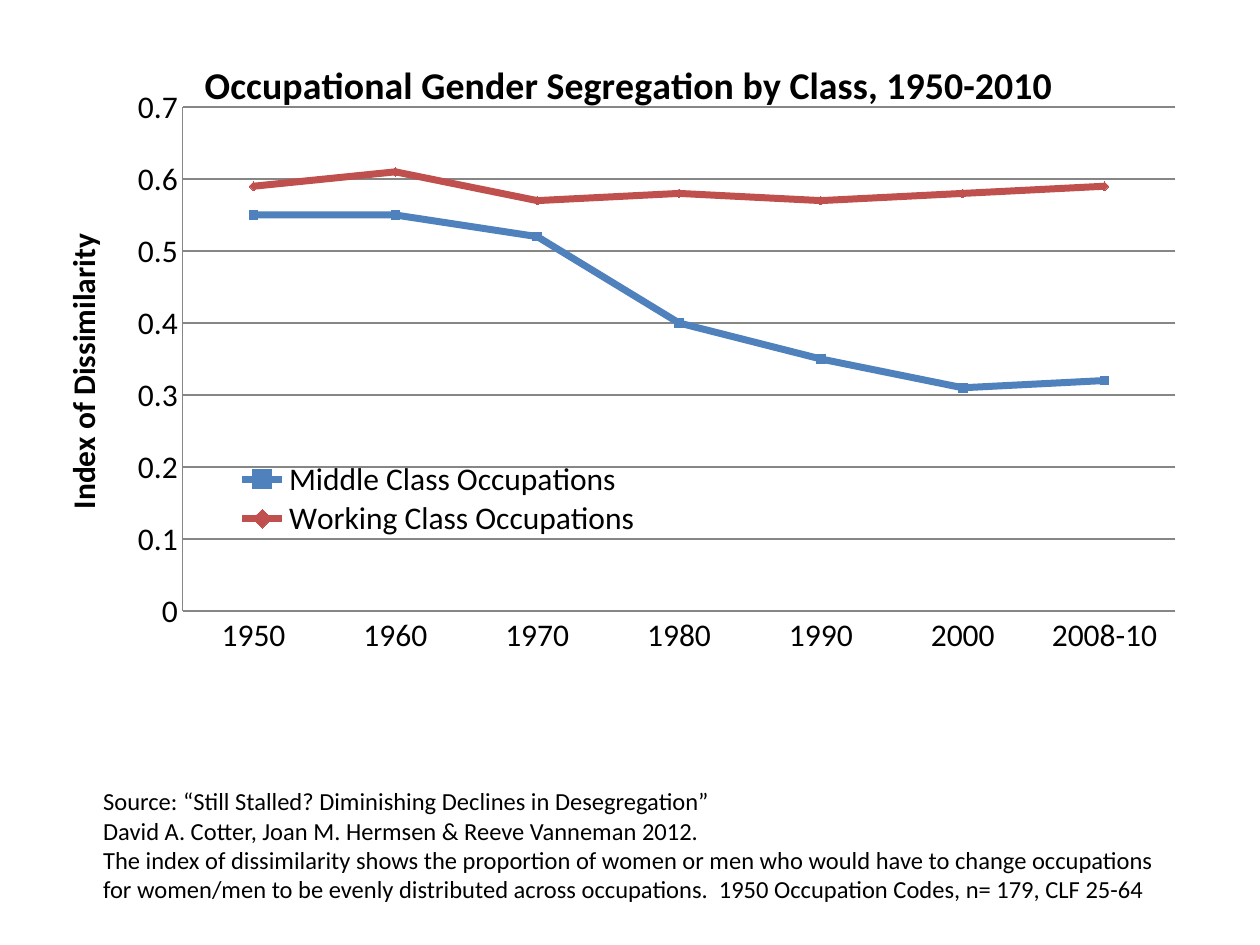
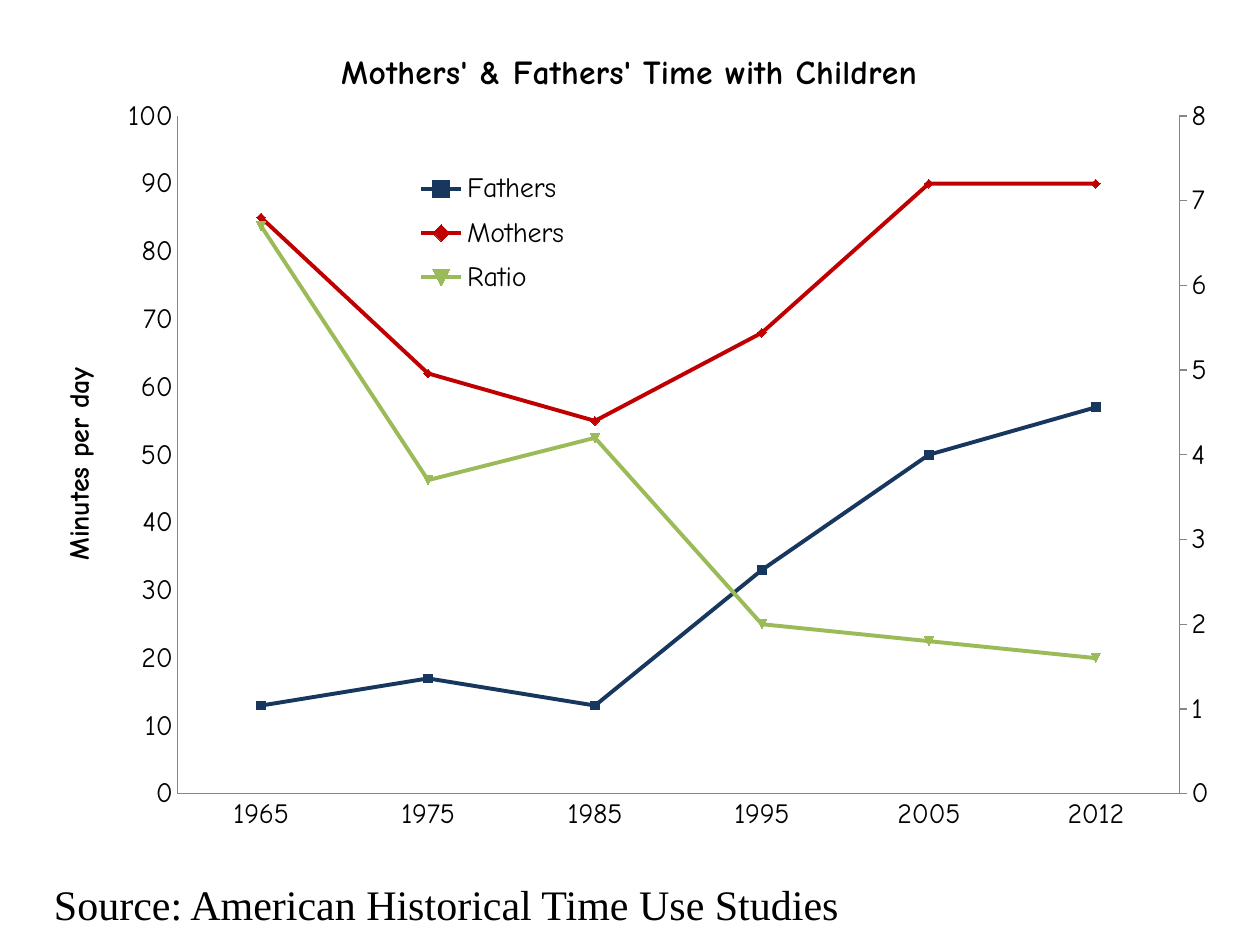
from copy import deepcopy
from dataclasses import dataclass

from lxml import etree
from pptx import Presentation
from pptx.chart.axis import ValueAxis
from pptx.chart.chart import Chart
from pptx.chart.data import CategoryChartData
from pptx.dml.color import RGBColor
from pptx.enum.chart import XL_CHART_TYPE, XL_LEGEND_POSITION, XL_MARKER_STYLE, XL_TICK_MARK
from pptx.enum.text import MSO_AUTO_SIZE
from pptx.oxml.ns import qn
from pptx.slide import Slide
from pptx.util import Inches, Pt

LINE_MARKERS = XL_CHART_TYPE.LINE_MARKERS
LEGEND_RIGHT = XL_LEGEND_POSITION.RIGHT
MARKER_AUTO = XL_MARKER_STYLE.AUTOMATIC
TICK_NONE = XL_TICK_MARK.NONE
TICK_OUT = XL_TICK_MARK.OUTSIDE
FIT_SHAPE = MSO_AUTO_SIZE.SHAPE_TO_FIT_TEXT

COLORS = {
    "text": "000000",
    "axis": "868686",
    "blue": "4F81BD",
    "brick": "C0504D",
    "navy": "17375E",
    "red": "C00000",
    "green": "9BBB59",
}
MARKER_SIZE = 5
AXIS_WIDTH = 0.75
TITLE_SCALE = 1.2

Box = tuple[float, float, float, float]
Point = tuple[float, float]


@dataclass
class Series:
    name: str
    values: tuple[float, ...]
    color: str


@dataclass
class LineChart:
    box: Box
    title: str
    title_at: Point
    axis_title: str
    axis_title_at: Point
    plot_box: Box
    legend_box: Box
    font: str
    size: int
    line_width: float
    categories: tuple[str, ...]
    series: tuple[Series, ...]
    maximum: float
    step: float
    gridlines: bool = False


@dataclass
class SourceNote:
    box: Box
    font: str
    size: int
    paragraphs: tuple[tuple[str, ...], ...]


SEGREGATION = LineChart(
    box=(0.25, 0.25, 9.5, 5.5),
    title="Occupational Gender Segregation by Class, 1950-2010",
    title_at=(1.32, 0.16),
    axis_title="Index of Dissimilarity",
    axis_title_at=(0.19, 1.56),
    plot_box=(1.2, 0.6, 7.88, 4),
    legend_box=(1.52, 3.39, 3.42, 0.64),
    font="Calibri",
    size=18,
    line_width=4,
    categories=("1950", "1960", "1970", "1980", "1990", "2000", "2008-10"),
    series=(
        Series("Middle Class Occupations", (0.55, 0.55, 0.52, 0.4, 0.35, 0.31, 0.32), "blue"),
        Series("Working Class Occupations", (0.59, 0.61, 0.57, 0.58, 0.57, 0.58, 0.59), "brick"),
    ),
    maximum=0.7,
    step=0.1,
    gridlines=True,
)
SEGREGATION_NOTE = SourceNote(
    box=(0.72, 6.19, 8.61, 1.04),
    font="Calibri",
    size=14,
    paragraphs=(
        ("Source: “Still Stalled? Diminishing Declines in Desegregation”",),
        ("David A. Cotter, Joan M. Hermsen & Reeve Vanneman 2012.",),
        (
            "The index of dissimilarity shows the proportion of women or men who would have to change occupations",
            "for women/men to be evenly distributed across occupations.  1950 Occupation Codes, n= 179, CLF 25-64",
        ),
    ),
)
CHILD_TIME = LineChart(
    box=(0.25, 0.17, 9.5, 6.67),
    title="Mothers' & Fathers' Time with Children",
    title_at=(2.41, 0.18),
    axis_title="Minutes per day",
    axis_title_at=(0.19, 2.71),
    plot_box=(1.16, 0.75, 7.95, 5.38),
    legend_box=(3.04, 1.1, 1.24, 1.16),
    font="Comic Neue",
    size=16,
    line_width=2.25,
    categories=("1965", "1975", "1985", "1995", "2005", "2012"),
    series=(
        Series("Fathers", (13, 17, 13, 33, 50, 57), "navy"),
        Series("Mothers", (85, 62, 55, 68, 90, 90), "red"),
        Series("Ratio", (6.7, 3.7, 4.2, 2, 1.8, 1.6), "green"),
    ),
    maximum=100,
    step=10,
)
CHILD_TIME_NOTE = SourceNote(
    box=(0.33, 6.92, 6.49, 0.5),
    font="Times New Roman",
    size=24,
    paragraphs=(("Source: American Historical Time Use Studies",),),
)


def color(name: str) -> RGBColor:
    return RGBColor.from_string(COLORS[name])


def style_font(font, name: str, size: float, bold: bool = False) -> None:
    font.name = name
    font.size = Pt(size)
    font.bold = bold
    font.color.rgb = color("text")


def style_line(line, name: str, width: float) -> None:
    line.color.rgb = color(name)
    line.width = Pt(width)


def set_layout(parent, place: Box | Point, chart_box: Box, after: str | None = None) -> None:
    for old in parent.findall(qn("c:layout")):
        parent.remove(old)
    layout = etree.Element(qn("c:layout"))
    manual = etree.SubElement(layout, qn("c:manualLayout"))
    settings = [("layoutTarget", "inner")] if after is None else []
    settings += [("xMode", "edge"), ("yMode", "edge")]
    chart_sizes = chart_box[2:] * 2
    settings += [(tag, length / full) for tag, length, full in zip("xywh", place, chart_sizes)]
    for tag, value in settings:
        etree.SubElement(manual, qn(f"c:{tag}")).set("val", str(value))
    if after is None:
        parent.insert(0, layout)
    else:
        parent.find(qn(after)).addnext(layout)


def set_title(title, text: str, at: Point, plan: LineChart, scale: float = 1) -> None:
    para = title.text_frame.paragraphs[0]
    para.text = text
    style_font(para.font, plan.font, plan.size * scale, bold=True)
    set_layout(title.element, at, plan.box, "c:tx")


def set_scale(axis: ValueAxis, maximum: float, step: float) -> None:
    axis.minimum_scale = 0
    axis.maximum_scale = maximum
    axis.major_unit = step


def style_axes(chart: Chart, plan: LineChart) -> None:
    values = chart.value_axis
    for axis in (chart.category_axis, values):
        axis.major_tick_mark = TICK_NONE
        axis.minor_tick_mark = TICK_NONE
        style_line(axis.format.line, "axis", AXIS_WIDTH)
    set_scale(values, plan.maximum, plan.step)
    values.tick_labels.number_format = "General"
    values.tick_labels.number_format_is_linked = False
    values.has_major_gridlines = plan.gridlines
    if plan.gridlines:
        style_line(values.major_gridlines.format.line, "axis", AXIS_WIDTH)
    set_title(values.axis_title, plan.axis_title, plan.axis_title_at, plan)
    body = values.axis_title.element.find(".//" + qn("a:bodyPr"))
    body.set("rot", "-5400000")
    body.set("vert", "horz")


def add_line_chart(page: Slide, plan: LineChart) -> Chart:
    data = CategoryChartData()
    data.categories = plan.categories
    for series in plan.series:
        data.add_series(series.name, series.values)
    chart = page.shapes.add_chart(LINE_MARKERS, *map(Inches, plan.box), data).chart
    style_font(chart.font, plan.font, plan.size)
    set_title(chart.chart_title, plan.title, plan.title_at, plan, TITLE_SCALE)

    chart.has_legend = True
    chart.legend.position = LEGEND_RIGHT
    chart.legend.include_in_layout = False
    style_font(chart.legend.font, plan.font, plan.size)
    legend = chart.element.find(".//" + qn("c:legend"))
    set_layout(legend, plan.legend_box, plan.box, "c:legendPos")
    set_layout(chart.element.find(".//" + qn("c:plotArea")), plan.plot_box, plan.box)
    style_axes(chart, plan)

    chart.plots[0].vary_by_categories = False
    for line, series in zip(chart.plots[0].series, plan.series):
        line.smooth = False
        style_line(line.format.line, series.color, plan.line_width)
        line.marker.style = MARKER_AUTO
        line.marker.size = MARKER_SIZE
        line.marker.format.fill.solid()
        line.marker.format.fill.fore_color.rgb = color(series.color)
        line.marker.format.line.color.rgb = color(series.color)
    return chart


def move_last_series_right(chart: Chart, maximum: float, step: float) -> None:
    plot_area = chart.element.find(".//" + qn("c:plotArea"))
    left = plot_area.find(qn("c:lineChart"))
    right = deepcopy(left)
    left.remove(left.findall(qn("c:ser"))[-1])
    for series in right.findall(qn("c:ser"))[:-1]:
        right.remove(series)
    left.addnext(right)

    category = deepcopy(plot_area.find(qn("c:catAx")))
    value = deepcopy(plot_area.find(qn("c:valAx")))
    value.remove(value.find(qn("c:title")))
    plot_area.find(qn("c:valAx")).addnext(value)
    value.addnext(category)
    category_id, value_id = "5001", "5002"
    for axis, own_id, cross_id in ((category, category_id, value_id),
                                   (value, value_id, category_id)):
        axis.find(qn("c:axId")).set("val", own_id)
        axis.find(qn("c:crossAx")).set("val", cross_id)
    for reference, axis_id in zip(right.findall(qn("c:axId")), (category_id, value_id)):
        reference.set("val", axis_id)
    category.find(qn("c:delete")).set("val", "1")
    value.find(qn("c:axPos")).set("val", "r")
    value.find(qn("c:crosses")).set("val", "max")
    right_axis = ValueAxis(value)
    right_axis.major_tick_mark = TICK_OUT
    set_scale(right_axis, maximum, step)


def add_source_note(page: Slide, note: SourceNote) -> None:
    frame = page.shapes.add_textbox(*map(Inches, note.box)).text_frame
    frame.word_wrap = False
    frame.auto_size = FIT_SHAPE
    for index, lines in enumerate(note.paragraphs):
        para = frame.add_paragraph() if index else frame.paragraphs[0]
        for number, line in enumerate(lines):
            if number:
                para.add_line_break()
            para.add_run().text = line
        style_font(para.font, note.font, note.size)


def main() -> None:
    deck = Presentation()
    deck.slide_width = Inches(10)
    deck.slide_height = Inches(7.5)
    blank = deck.slide_layouts[6]

    segregation_page = deck.slides.add_slide(blank)
    add_line_chart(segregation_page, SEGREGATION)
    add_source_note(segregation_page, SEGREGATION_NOTE)

    child_time_page = deck.slides.add_slide(blank)
    add_source_note(child_time_page, CHILD_TIME_NOTE)
    child_time_chart = add_line_chart(child_time_page, CHILD_TIME)
    move_last_series_right(child_time_chart, maximum=8, step=1)

    deck.save("out.pptx")


if __name__ == "__main__":
    main()
